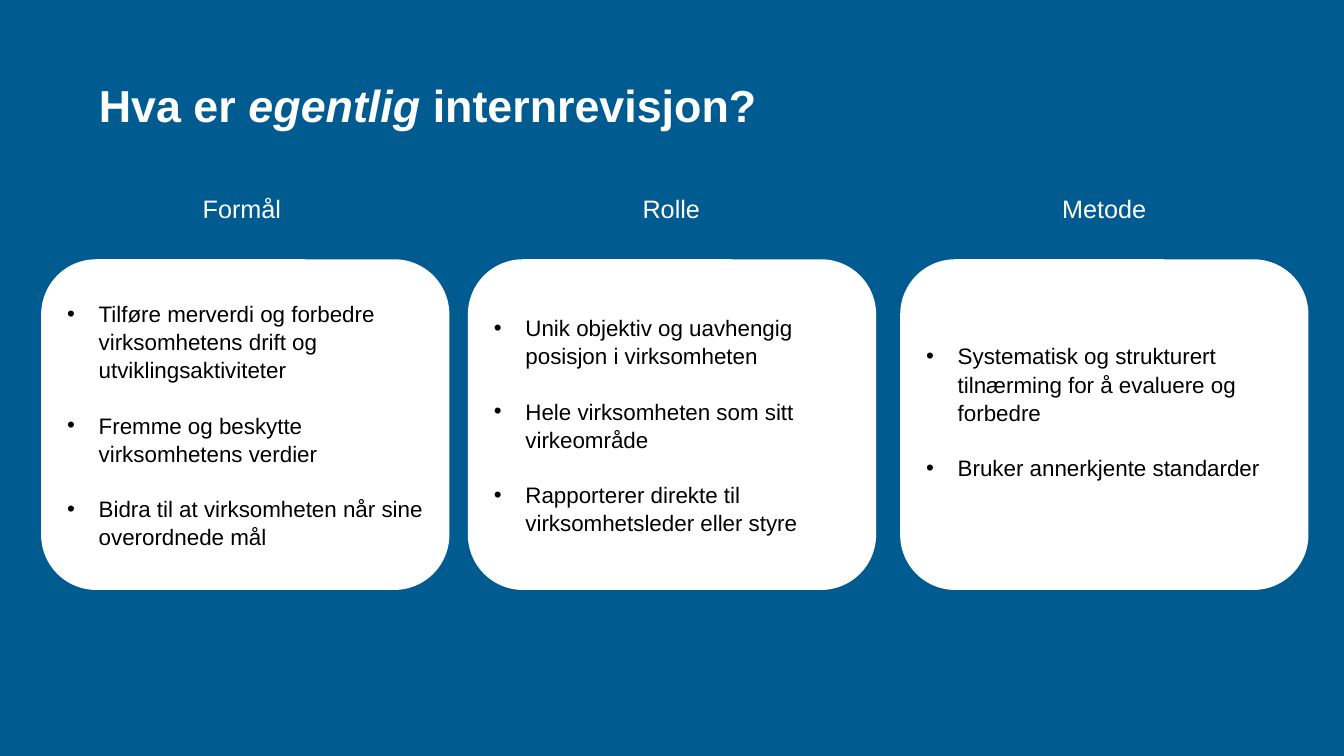
from dataclasses import dataclass
from typing import Any

from lxml.etree import SubElement
from pptx import Presentation
from pptx.dml.color import RGBColor
from pptx.enum.shapes import MSO_SHAPE
from pptx.enum.text import MSO_ANCHOR, MSO_AUTO_SIZE, PP_ALIGN
from pptx.oxml.ns import qn
from pptx.util import Pt


@dataclass(frozen=True)
class Theme:
    blue: RGBColor = RGBColor(0x00, 0x5B, 0x91)
    white: RGBColor = RGBColor(0xFF, 0xFF, 0xFF)
    black: RGBColor = RGBColor(0x00, 0x00, 0x00)
    font: str = "Arial"
    title_size: float = 32
    label_size: float = 18
    body_size: float = 16
    body_spacing: float = 1.05
    body_gap: float = 19.3
    bullet_indent: float = 22.5


@dataclass(frozen=True)
class Column:
    label: str
    card_left: float
    items: tuple[str, ...]
    bottom_inset: float = 3.6


THEME = Theme()
LABEL_LEFT, LABEL_PITCH, LABEL_TOP, LABEL_WIDTH, LABEL_HEIGHT = 54, 306.7, 134.6, 242.6, 29
CARD_TOP, CARD_WIDTH, CARD_HEIGHT = 185.2, 291.6, 236.2

COLUMNS = (
    Column("Formål ", 29.4, (
        "Tilføre merverdi og forbedre virksomhetens drift og utviklingsaktiviteter",
        "Fremme og beskytte virksomhetens verdier",
        "Bidra til at virksomheten når sine overordnede mål",
    )),
    Column("Rolle ", 334.2, (
        "Unik objektiv og uavhengig posisjon i virksomheten",
        "Hele virksomheten som sitt virkeområde",
        "Rapporterer direkte til virksomhetsleder eller styre",
    )),
    Column("Metode", 643, (
        "Systematisk og strukturert tilnærming for å evaluere og forbedre",
        "Bruker annerkjente standarder",
    ), bottom_inset=22.9),
)


def add_span(para: Any, text: str, *, size: float, color: RGBColor,
             bold: bool = False, italic: bool = False) -> None:
    span = para.add_run()
    span.text = text
    span.font.name = THEME.font
    span.font.size = Pt(size)
    span.font.color.rgb = color
    span.font.bold = bold
    span.font.italic = italic


def add_bullet(para: Any) -> None:
    properties = para._p.get_or_add_pPr()
    properties.set("marL", str(Pt(THEME.bullet_indent)))
    properties.set("indent", str(-Pt(THEME.bullet_indent)))
    SubElement(properties, qn("a:buFont")).set("typeface", THEME.font)
    SubElement(properties, qn("a:buChar")).set("char", "•")


def format_title(title: Any) -> None:
    title.left, title.top, title.width, title.height = Pt(70.6), Pt(17.3), Pt(790.6), Pt(77)
    frame = title.text_frame
    frame.auto_size = MSO_AUTO_SIZE.NONE
    frame.word_wrap = True
    frame.vertical_anchor = MSO_ANCHOR.BOTTOM
    frame.margin_left = frame.margin_right = frame.margin_top = frame.margin_bottom = 0
    para = frame.paragraphs[0]
    para.alignment = PP_ALIGN.LEFT
    for text, italic in (("Hva er ", False), ("egentlig", True), (" internrevisjon?", False)):
        add_span(para, text, size=THEME.title_size, color=THEME.white, bold=True, italic=italic)


def add_label(page: Any, text: str, left: float) -> None:
    box = page.shapes.add_textbox(Pt(left), Pt(LABEL_TOP), Pt(LABEL_WIDTH), Pt(LABEL_HEIGHT))
    frame = box.text_frame
    frame.word_wrap = True
    frame.auto_size = MSO_AUTO_SIZE.SHAPE_TO_FIT_TEXT
    para = frame.paragraphs[0]
    para.alignment = PP_ALIGN.CENTER
    add_span(para, text, size=THEME.label_size, color=THEME.white)


def add_card(page: Any, column: Column) -> None:
    card = page.shapes.add_shape(MSO_SHAPE.ROUNDED_RECTANGLE, Pt(column.card_left),
                                 Pt(CARD_TOP), Pt(CARD_WIDTH), Pt(CARD_HEIGHT))
    card.shadow.inherit = False
    card.fill.solid()
    card.fill.fore_color.rgb = THEME.white
    card.line.fill.background()
    frame = card.text_frame
    frame.word_wrap = True
    frame.vertical_anchor = MSO_ANCHOR.MIDDLE
    frame.margin_bottom = Pt(column.bottom_inset)
    for index, item in enumerate(column.items):
        para = frame.add_paragraph() if index else frame.paragraphs[0]
        add_bullet(para)
        para.alignment = PP_ALIGN.LEFT
        para.line_spacing = THEME.body_spacing
        if index:
            para.space_before = Pt(THEME.body_gap)
        add_span(para, item, size=THEME.body_size, color=THEME.black)


def main() -> None:
    deck = Presentation()
    deck.slide_width, deck.slide_height = Pt(960), Pt(540)
    page = deck.slides.add_slide(deck.slide_layouts[5])
    page.background.fill.solid()
    page.background.fill.fore_color.rgb = THEME.blue
    format_title(page.shapes.title)
    for index, column in enumerate(COLUMNS):
        add_label(page, column.label, LABEL_LEFT + index * LABEL_PITCH)
        add_card(page, column)
    deck.save("out.pptx")


if __name__ == "__main__":
    main()
